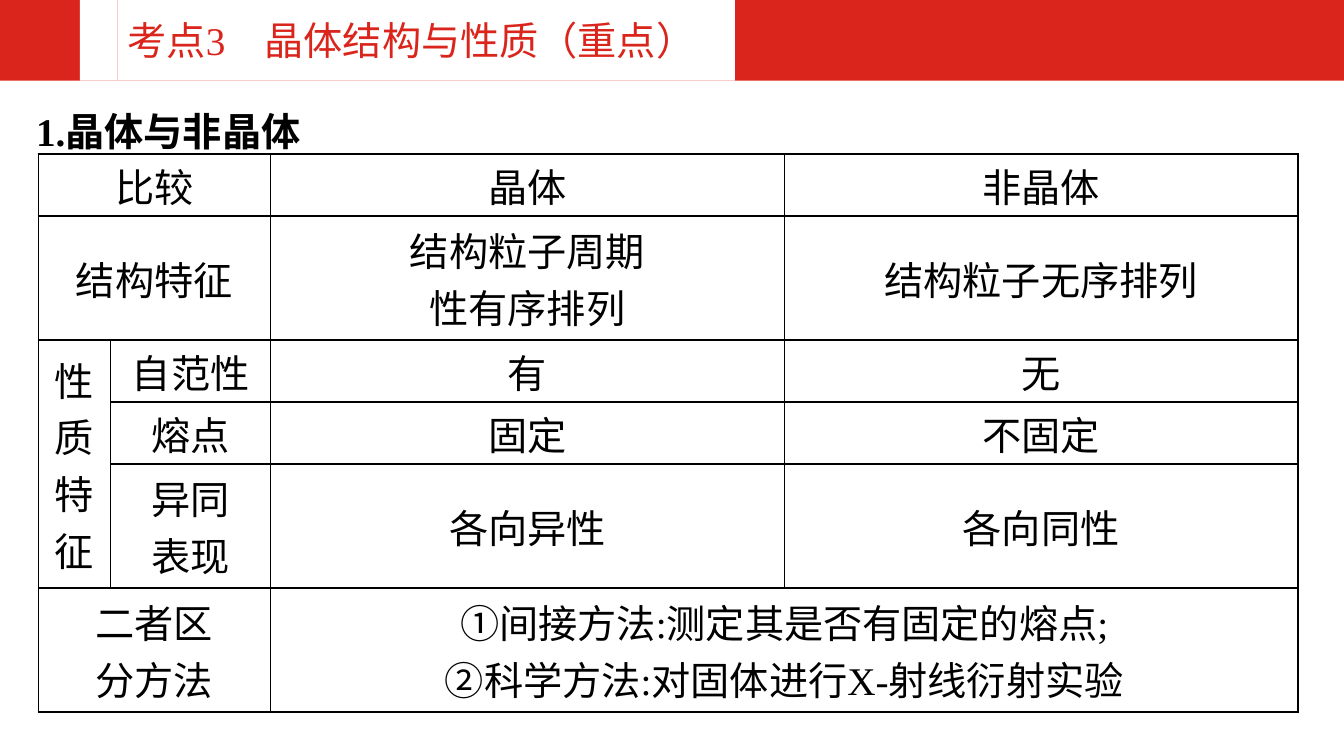
from dataclasses import dataclass

from lxml.etree import SubElement
from pptx import Presentation
from pptx.dml.color import RGBColor as Rgb
from pptx.enum.shapes import MSO_SHAPE as Kind
from pptx.enum.text import MSO_ANCHOR as Anchor, MSO_AUTO_SIZE as Auto, PP_ALIGN as Align
from pptx.oxml import parse_xml
from pptx.oxml.ns import nsdecls, qn
from pptx.util import Pt


@dataclass(frozen=True)
class Theme:
    red: str = "DA251C"
    white: str = "FFFFFF"
    black: str = "000000"
    font: str = "Times New Roman"
    size: float = 28
    line: float = 1


def paint(item, color):
    item.fill.solid()
    item.fill.fore_color.rgb = Rgb.from_string(color)


def write(frame, text, *, theme, color, bold=False, align=Align.LEFT, space=None):
    """Fill a text frame, one paragraph per line of text."""
    for i, line in enumerate(text.split("\n")):
        para = frame.add_paragraph() if i else frame.paragraphs[0]
        para.alignment = align
        if space:
            para.line_spacing = space
        run = para.add_run()
        run.text = line
        font = run.font
        font.name, font.size, font.bold = theme.font, Pt(theme.size), bold
        font.color.rgb = Rgb.from_string(color)


def edge(cell, theme):
    """Draw a thin line on all four sides of a cell."""
    props = cell._tc.get_or_add_tcPr()
    for i, side in enumerate(("lnL", "lnR", "lnT", "lnB")):
        line = parse_xml(f'<a:{side} {nsdecls("a")} w="{Pt(theme.line)}"/>')
        fill = SubElement(line, qn("a:solidFill"))
        SubElement(fill, qn("a:srgbClr"), val=theme.black)
        props.insert(i, line)


class Deck:
    def __init__(self, theme, wide, high):
        self.theme = theme
        self.file = Presentation()
        self.file.slide_width, self.file.slide_height = Pt(wide), Pt(high)
        self.slide = self.file.slides.add_slide(self.file.slide_layouts[5])

    def rect(self, box, color):
        shape = self.slide.shapes.add_shape(Kind.RECTANGLE, *map(Pt, box))
        shape.shadow.inherit = False
        shape.line.fill.background()
        paint(shape, color)

    def title(self, box, text):
        shape = self.slide.shapes.title
        shape.left, shape.top, shape.width, shape.height = map(Pt, box)
        paint(shape, self.theme.white)
        frame = shape.text_frame
        frame.auto_size, frame.word_wrap = Auto.NONE, True
        frame.vertical_anchor = Anchor.MIDDLE
        write(frame, text, theme=self.theme, color=self.theme.red)
        # Bring the title in front of the banner
        shape.element.getparent().append(shape.element)

    def label(self, box, text):
        frame = self.slide.shapes.add_textbox(*map(Pt, box)).text_frame
        frame.word_wrap, frame.auto_size = True, Auto.SHAPE_TO_FIT_TEXT
        write(frame, text, theme=self.theme, color=self.theme.black, bold=True, space=1.5)

    def table(self, spot, cols, rows, data, spans):
        box = (*spot, sum(cols), sum(rows))
        grid = self.slide.shapes.add_table(len(rows), len(cols), *map(Pt, box)).table
        grid.first_row = grid.horz_banding = False
        for col, wide in zip(grid.columns, cols):
            col.width = Pt(wide)
        for row, high in zip(grid.rows, rows):
            row.height = Pt(high)
        for r, line in enumerate(data):
            for c, text in enumerate(line):
                self.cell(grid.cell(r, c), text)
        for start, end in spans:
            grid.cell(*start).merge(grid.cell(*end))

    def cell(self, cell, text):
        paint(cell, self.theme.white)
        edge(cell, self.theme)
        cell.vertical_anchor = Anchor.MIDDLE
        cell.margin_left = cell.margin_right = cell.margin_top = cell.margin_bottom = 0
        if text:
            write(cell.text_frame, text, theme=self.theme, color=self.theme.black,
                  align=Align.CENTER)


def main():
    theme = Theme()
    deck = Deck(theme, 960, 540)

    # Heading above the table
    deck.label((18.7, 56.2, 923, 51.8), "1.晶体与非晶体")

    # Banner with the title
    bar = 57.6
    deck.rect((0, 0, 960, bar), theme.red)
    deck.rect((57, 0, 27, bar), theme.white)
    deck.title((84, 0, 441, bar), "考点3　晶体结构与性质（重点）")

    # Comparison table
    unit = 44.3
    data = [
        ("比较", "", "晶体", "非晶体"),
        ("结构特征", "", "结构粒子周期\n性有序排列", "结构粒子无序排列"),
        ("性质\n特征", "自范性", "有", "无"),
        ("", "熔点", "固定", "不固定"),
        ("", "异同\n表现", "各向异性", "各向同性"),
        ("二者区\n分方法", "",
         "①间接方法:测定其是否有固定的熔点;\n②科学方法:对固体进行X-射线衍射实验", ""),
    ]
    spans = [((r, 0), (r, 1)) for r in (0, 1, 5)]
    spans += [((2, 0), (4, 0)), ((5, 2), (5, 3))]
    deck.table((27.2, 110), (52, 114, 367, 367),
               [unit * n for n in (1, 2, 1, 1, 2, 2)], data, spans)

    deck.file.save("out.pptx")


if __name__ == "__main__":
    main()
